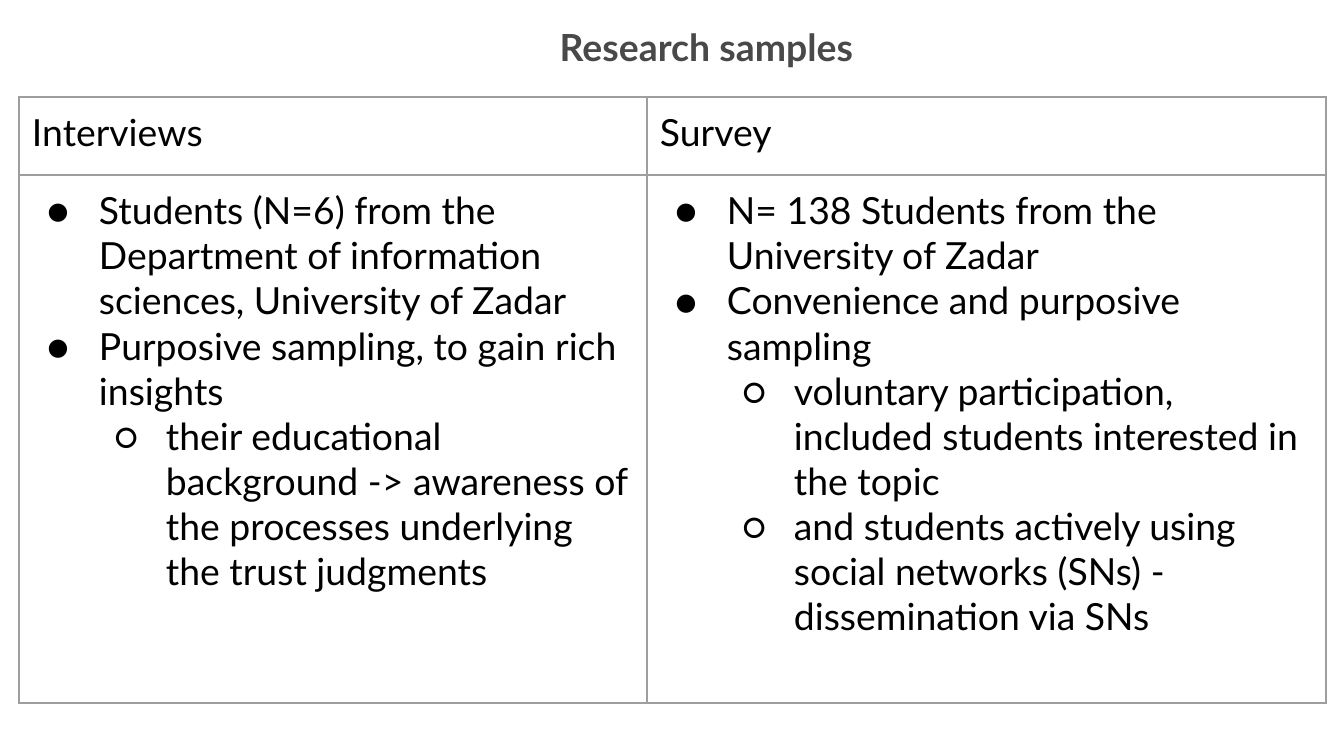
from lxml.etree import SubElement
from pptx import Presentation
from pptx.dml.color import RGBColor
from pptx.enum.text import MSO_ANCHOR, PP_ALIGN
from pptx.oxml.ns import qn
from pptx.util import Pt

TITLE = "Research samples"
HEADINGS = ["Interviews", "Survey"]
SAMPLES = [
    [
        (0, "Students (N=6) from the Department of information sciences, University of Zadar"),
        (0, "Purposive sampling, to gain rich insights"),
        (1, "their educational background -> awareness of the processes underlying the trust judgments"),
    ],
    [
        (0, "N= 138 Students from the University of Zadar"),
        (0, "Convenience and purposive sampling"),
        (1, "voluntary participation, included students interested in the topic"),
        (1, "and students actively using social networks (SNs) - dissemination via SNs"),
    ],
]

BLACK = RGBColor(0x00, 0x00, 0x00)
TITLE_GRAY = RGBColor(0x49, 0x49, 0x49)
BORDER_GRAY = RGBColor(0x9E, 0x9E, 0x9E)
FONT = "Lato"
TEXT_SIZE = Pt(20)
BORDER_WIDTH = Pt(0.75)
BULLETS = "●○"

SLIDE_SIZE = (1344, 756)
TITLE_AREA = (267, 11, 879, 122)
TABLE_ORIGIN = (19, 97)
COLUMN_WIDTHS = [628, 679]
ROW_HEIGHTS = [78, 528]
INSET = 13
INDENT_STEP = 67
HANGING = 52


def px(length):
    """Turn pixels into EMU."""
    return round(length * 914400 / 134.4)


def add_span(para, text, color, bold=False):
    """Add one styled run to a paragraph."""
    span = para.add_run()
    span.text = text
    span.font.name = FONT
    span.font.size = TEXT_SIZE
    span.font.bold = bold
    span.font.color.rgb = color


def set_insets(holder):
    """Give a cell or text frame equal margins."""
    holder.margin_left = holder.margin_right = px(INSET)
    holder.margin_top = holder.margin_bottom = px(INSET)


def add_bullet(para, level):
    """Give a paragraph its hanging indent and marker."""
    para.level = level
    properties = para._p.get_or_add_pPr()
    properties.set("marL", str(px(INDENT_STEP * (level + 1))))
    properties.set("indent", str(-px(HANGING)))
    color = SubElement(properties, qn("a:buClr"))
    SubElement(color, qn("a:srgbClr"), val=str(BLACK))
    SubElement(properties, qn("a:buFont"), typeface=FONT)
    SubElement(properties, qn("a:buChar"), char=BULLETS[level])


def add_borders(cell):
    """Draw the four edges of a cell."""
    properties = cell._tc.get_or_add_tcPr()
    for side in ("lnL", "lnR", "lnT", "lnB"):
        line = SubElement(properties, qn(f"a:{side}"), w=str(BORDER_WIDTH))
        fill = SubElement(line, qn("a:solidFill"))
        SubElement(fill, qn("a:srgbClr"), val=str(BORDER_GRAY))


def style_cell(cell):
    """Set the margins, edges and empty fill of a cell."""
    set_insets(cell)
    cell.vertical_anchor = MSO_ANCHOR.TOP
    add_borders(cell)
    cell.fill.background()


def add_samples_table(page):
    """Add the table that compares the two samples."""
    size = (sum(COLUMN_WIDTHS), sum(ROW_HEIGHTS))
    frame = page.shapes.add_table(
        len(ROW_HEIGHTS), len(COLUMN_WIDTHS), *map(px, TABLE_ORIGIN + size)
    )
    table = frame.table
    table.first_row = table.horz_banding = False
    for row, height in zip(table.rows, ROW_HEIGHTS):
        row.height = px(height)
    for index, width in enumerate(COLUMN_WIDTHS):
        table.columns[index].width = px(width)
        heading, body = table.cell(0, index), table.cell(1, index)
        style_cell(heading)
        style_cell(body)
        add_span(heading.text_frame.paragraphs[0], HEADINGS[index], BLACK)
        for number, (level, text) in enumerate(SAMPLES[index]):
            words = body.text_frame
            para = words.add_paragraph() if number else words.paragraphs[0]
            add_bullet(para, level)
            add_span(para, text, BLACK)


def add_title(page):
    """Add the centred slide title."""
    box = page.shapes.add_textbox(*map(px, TITLE_AREA))
    words = box.text_frame
    words.word_wrap = True
    words.vertical_anchor = MSO_ANCHOR.TOP
    set_insets(words)
    para = words.paragraphs[0]
    para.alignment = PP_ALIGN.CENTER
    add_span(para, TITLE, TITLE_GRAY, bold=True)


def main():
    """Build and save the deck."""
    deck = Presentation()
    deck.slide_width, deck.slide_height = map(px, SLIDE_SIZE)
    page = deck.slides.add_slide(deck.slide_layouts[6])
    add_samples_table(page)
    add_title(page)
    deck.save("out.pptx")


if __name__ == "__main__":
    main()
